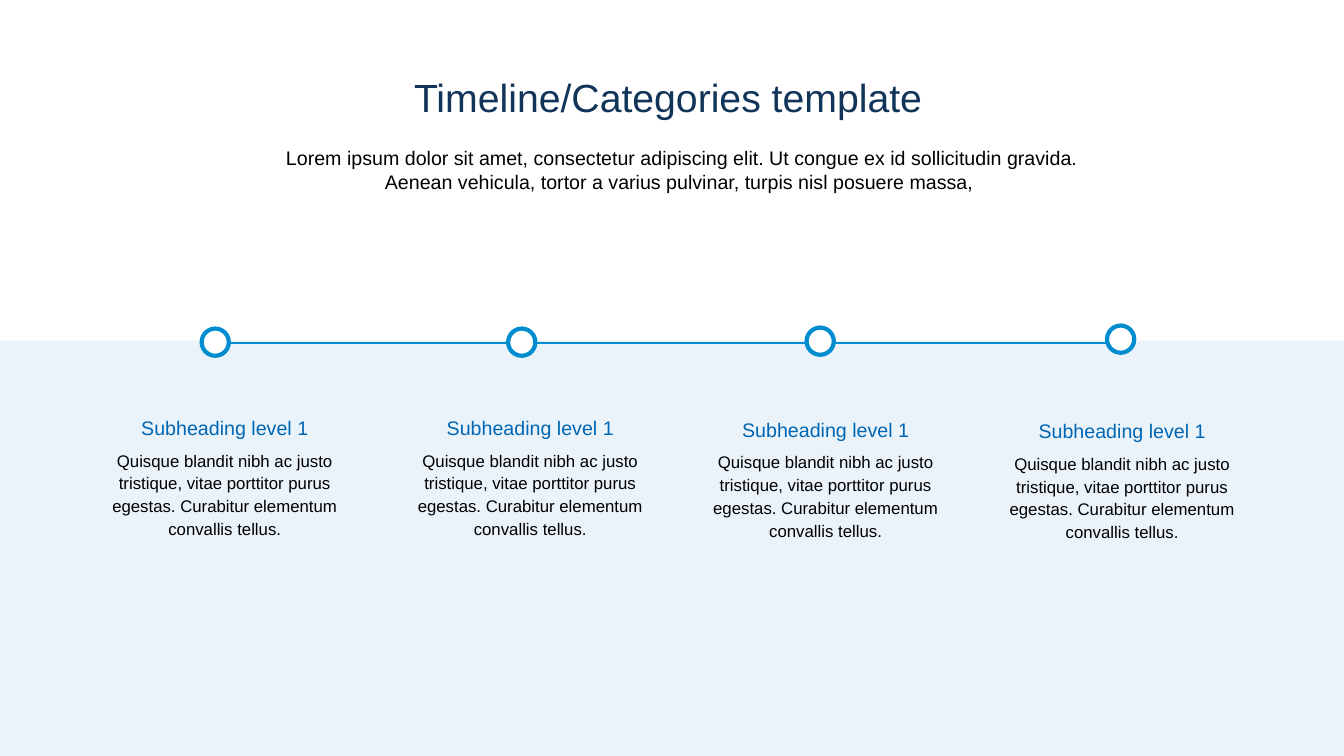
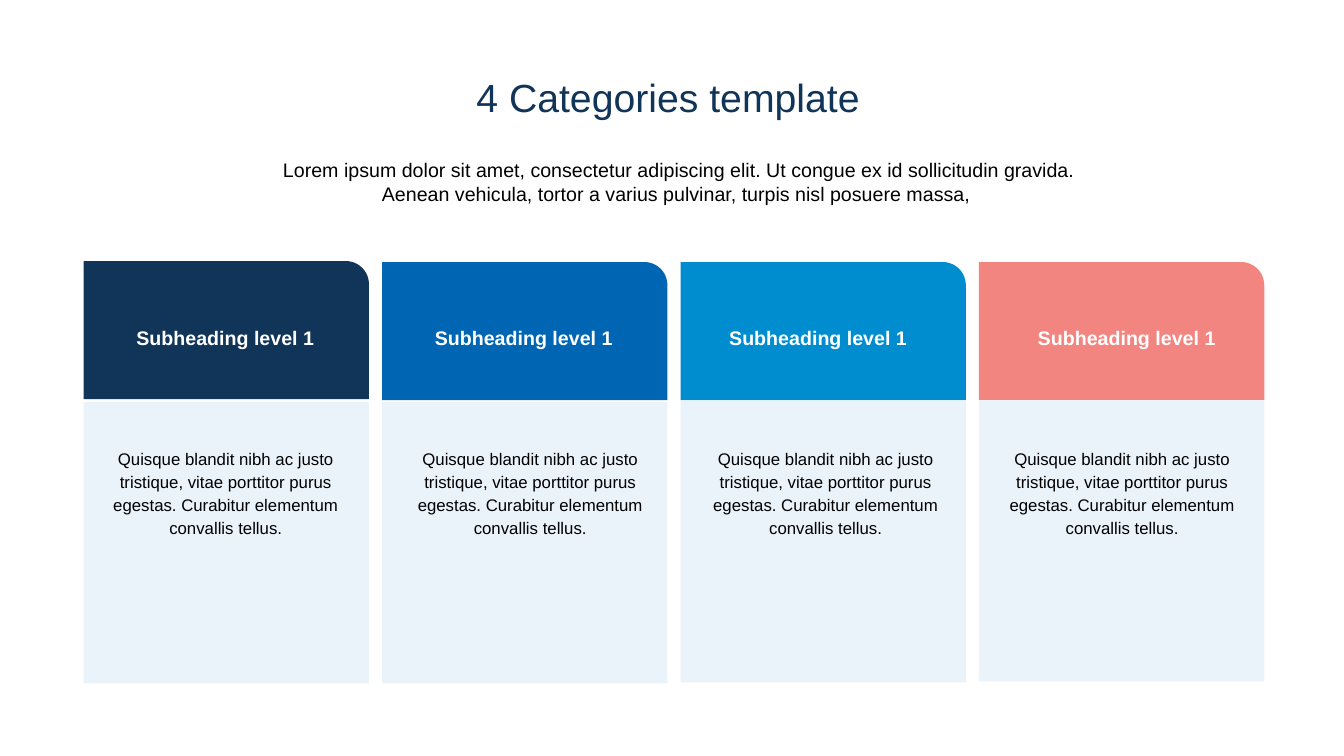
from dataclasses import dataclass

from lxml import etree
from pptx import Presentation
from pptx.dml.color import RGBColor
from pptx.enum import shapes, text
from pptx.oxml import ns
from pptx.util import Inches, Pt


@dataclass(frozen=True)
class Theme:
    font: str = "Arial"
    navy: str = "113459"
    blue: str = "0066B3"
    sky: str = "008DD0"
    coral: str = "F38580"
    pale: str = "EBF3FA"
    white: str = "FFFFFF"
    black: str = "000000"
    title_size: float = 28
    heading_size: float = 14
    body_size: float = 12
    leading: float = 1.14
    body_gap: float = 6


@dataclass(frozen=True)
class Box:
    left: float
    top: float
    width: float
    height: float

    def lengths(self):
        return tuple(Inches(n) for n in (self.left, self.top, self.width, self.height))


@dataclass(frozen=True)
class Copy:
    words: str
    size: float
    color: str
    bold: bool = False
    leading: float | None = None
    space_before: float = 0


@dataclass(frozen=True)
class Milestone:
    marker_left: float
    marker_top: float
    text_left: float
    text_top: float


@dataclass(frozen=True)
class Category:
    color: str
    header_top: float
    panel_top: float
    heading_left: float
    body_left: float


THEME = Theme()
SLIDE_WIDTH, SLIDE_HEIGHT = 13.33, 7.5
TITLE_BOX = Box(0.68, 0.61, 11.89, 0.6)
INTRO = (
    "Lorem ipsum dolor sit amet, consectetur adipiscing elit. Ut congue ex id sollicitudin gravida. "
    "Aenean vehicula, tortor a varius pulvinar, turpis nisl posuere massa, "
)
SUBHEADING = "Subheading level 1"
BODY = Copy(
    "Quisque blandit nibh ac justo tristique, vitae porttitor purus egestas. "
    "Curabitur elementum convallis tellus.",
    THEME.body_size, THEME.black, leading=THEME.leading, space_before=THEME.body_gap,
)
TEXT_WIDTH = 2.86

BAND_TOP = 3.38
MARKER_SIZE = 0.27
TIMELINE_Y = 3.4
TIMELINE_START, TIMELINE_END = 2.27, 11.13
MILESTONES = (
    Milestone(2, 3.26, 0.8, 4.04),
    Milestone(5.04, 3.26, 3.83, 4.04),
    Milestone(8, 3.25, 6.76, 4.06),
    Milestone(10.98, 3.23, 9.7, 4.07),
)

CARD_LEFT, CARD_PITCH, CARD_WIDTH = 0.83, 2.96, 2.83
HEADER_HEIGHT, PANEL_HEIGHT = 1.37, 2.79
CATEGORIES = (
    Category(THEME.navy, 2.59, 3.99, 1.11, 0.81),
    Category(THEME.blue, 2.6, 3.99, 4.07, 3.83),
    Category(THEME.sky, 2.6, 3.98, 6.99, 6.76),
    Category(THEME.coral, 2.6, 3.97, 10.05, 9.7),
)


def rgb(color: str) -> RGBColor:
    return RGBColor.from_string(color)


def write(frame, *copies: Copy) -> None:
    frame.word_wrap = True
    frame.vertical_anchor = text.MSO_ANCHOR.TOP
    for index, copy in enumerate(copies):
        paragraph = frame.add_paragraph() if index else frame.paragraphs[0]
        paragraph.alignment = text.PP_ALIGN.CENTER
        paragraph.space_before = Pt(copy.space_before)
        if copy.leading:
            paragraph.line_spacing = copy.leading
        run = paragraph.add_run()
        run.text = copy.words
        run.font.name = THEME.font
        run.font.size = Pt(copy.size)
        run.font.bold = copy.bold
        run.font.color.rgb = rgb(copy.color)


def add_text(slide, box: Box, *copies: Copy) -> None:
    frame = slide.shapes.add_textbox(*box.lengths()).text_frame
    write(frame, *copies)
    frame.auto_size = text.MSO_AUTO_SIZE.SHAPE_TO_FIT_TEXT


def add_filled(slide, kind, box: Box, color: str, outline: str | None = None):
    shape = slide.shapes.add_shape(kind, *box.lengths())
    shape.shadow.inherit = False
    shape.fill.solid()
    shape.fill.fore_color.rgb = rgb(color)
    if outline:
        shape.line.color.rgb = rgb(outline)
        shape.line.width = Pt(3)
    else:
        shape.line.fill.background()
    return shape


def add_timeline(slide) -> None:
    y = Inches(TIMELINE_Y)
    timeline = slide.shapes.add_connector(
        shapes.MSO_CONNECTOR.STRAIGHT, Inches(TIMELINE_START), y, Inches(TIMELINE_END), y
    )
    timeline.line.color.rgb = rgb(THEME.sky)
    timeline.line.width = Pt(1.5)
    etree.SubElement(timeline._element.spPr, ns.qn("a:effectLst"))


def add_titled_slide(deck, title: str, intro_left: float, intro_top: float):
    slide = deck.slides.add_slide(deck.slide_layouts[5])
    heading = slide.shapes.title
    heading.left, heading.top, heading.width, heading.height = TITLE_BOX.lengths()
    write(heading.text_frame, Copy(title, THEME.title_size, THEME.navy, leading=THEME.leading))
    heading.text_frame.auto_size = text.MSO_AUTO_SIZE.NONE
    add_text(
        slide, Box(intro_left, intro_top, 8.29, 0.57),
        Copy(INTRO, THEME.heading_size, THEME.black),
    )
    return slide


def build_timeline_slide(deck) -> None:
    slide = add_titled_slide(deck, "Timeline/Categories template", 2.62, 1.4)
    band = Box(0, BAND_TOP, SLIDE_WIDTH, SLIDE_HEIGHT - BAND_TOP)
    add_filled(slide, shapes.MSO_SHAPE.RECTANGLE, band, THEME.pale)
    add_timeline(slide)
    subheading = Copy(SUBHEADING, THEME.heading_size, THEME.blue, leading=THEME.leading)
    for stop in MILESTONES:
        marker = Box(stop.marker_left, stop.marker_top, MARKER_SIZE, MARKER_SIZE)
        add_filled(slide, shapes.MSO_SHAPE.OVAL, marker, THEME.white, THEME.sky)
        add_text(slide, Box(stop.text_left, stop.text_top, TEXT_WIDTH, 1.36), subheading, BODY)


def build_categories_slide(deck) -> None:
    slide = add_titled_slide(deck, "4 Categories template", 2.59, 1.52)
    subheading = Copy(
        SUBHEADING, THEME.heading_size, THEME.white, bold=True, leading=THEME.leading
    )
    for index, category in enumerate(CATEGORIES):
        left = CARD_LEFT + index * CARD_PITCH
        header = Box(left, category.header_top, CARD_WIDTH, HEADER_HEIGHT)
        panel = Box(left, category.panel_top, CARD_WIDTH, PANEL_HEIGHT)
        add_filled(slide, shapes.MSO_SHAPE.ROUND_1_RECTANGLE, header, category.color)
        add_filled(slide, shapes.MSO_SHAPE.RECTANGLE, panel, THEME.pale)
        add_text(slide, Box(category.heading_left, 3.15, 2.25, 0.35), subheading)
        add_text(slide, Box(category.body_left, 4.37, TEXT_WIDTH, 1.11), BODY)


def main() -> None:
    deck = Presentation()
    deck.slide_width, deck.slide_height = Inches(SLIDE_WIDTH), Inches(SLIDE_HEIGHT)
    build_timeline_slide(deck)
    build_categories_slide(deck)
    deck.save("out.pptx")


if __name__ == "__main__":
    main()
